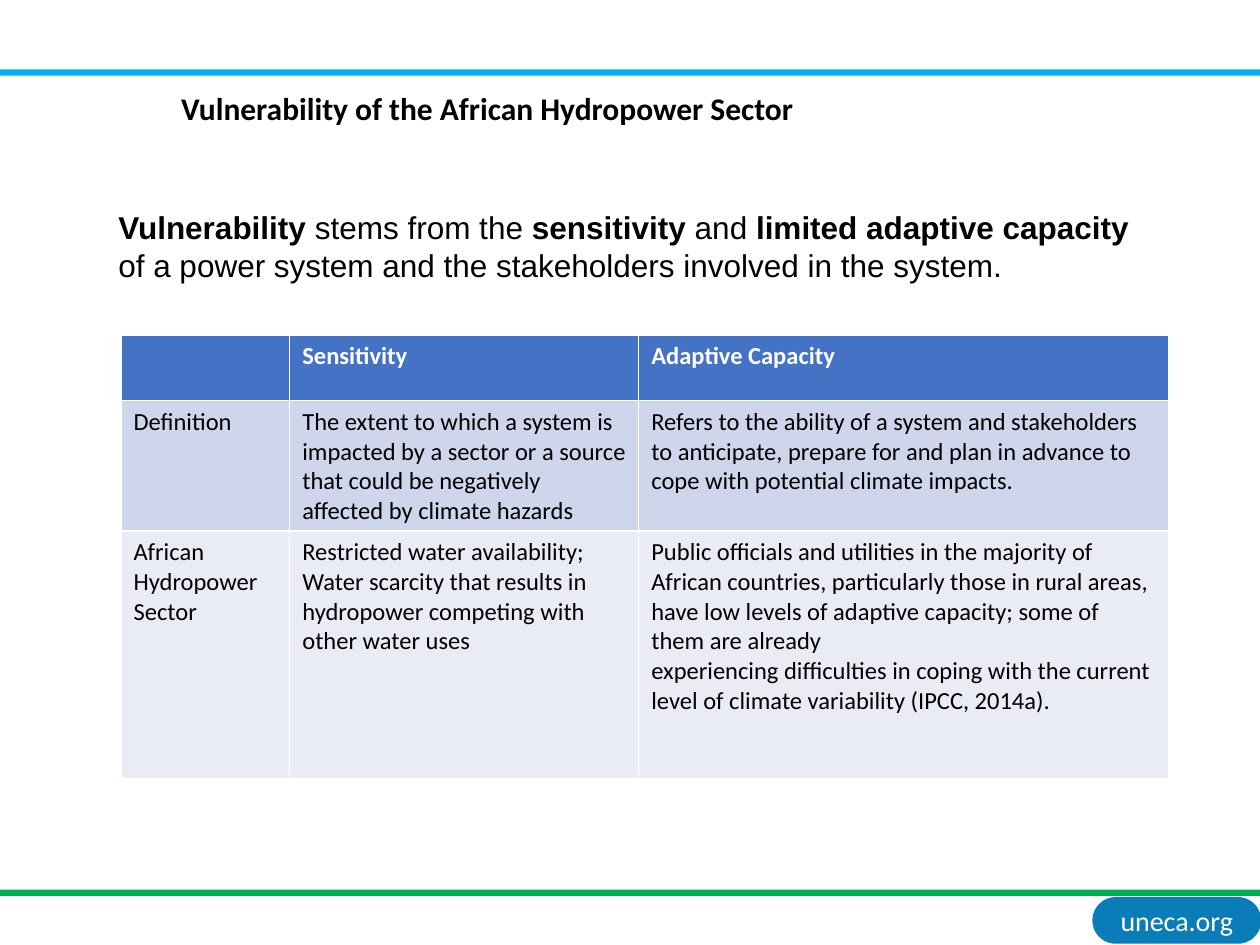
import pptx
import pptx.dml.color
import pptx.enum.shapes
import pptx.enum.text
import pptx.util
from dataclasses import dataclass

Inches = pptx.util.Inches
Shape = pptx.enum.shapes.MSO_SHAPE


@dataclass(frozen=True)
class Theme:
    sky: str = "00B0F0"
    green: str = "00B050"
    badge: str = "0A7CB8"
    header: str = "4472C4"
    bands: tuple = ("CFD5EA", "E9EBF5")
    black: str = "000000"
    white: str = "FFFFFF"
    heading_size: int = 18
    badge_size: int = 16
    table_size: int = 14


theme = Theme()


def paint(target, color):
    target.fill.solid()
    target.fill.fore_color.rgb = pptx.dml.color.RGBColor.from_string(color)


def add_span(para, text, size, color, bold=False, font="Calibri"):
    span = para.add_run()
    span.text = text
    span.font.name = font
    span.font.size = pptx.util.Pt(size)
    span.font.bold = bold
    span.font.color.rgb = pptx.dml.color.RGBColor.from_string(color)


deck = pptx.Presentation()
deck.slide_width, deck.slide_height = Inches(10), Inches(7.5)
page = deck.slides.add_slide(deck.slide_layouts[6])

# Footer badge and the two page rules
blocks = [
    (Shape.ROUNDED_RECTANGLE, 8.67, 7.12, 1.34, 0.37, theme.badge),
    (Shape.RECTANGLE, 0, 0.55, 10, 0.05, theme.sky),
    (Shape.RECTANGLE, 0, 7.06, 10, 0.05, theme.green),
]
for kind, left, top, width, height, color in blocks:
    block = page.shapes.add_shape(
        kind, Inches(left), Inches(top), Inches(width), Inches(height))
    block.shadow.inherit = False
    block.line.fill.background()
    paint(block, color)
    if kind == Shape.ROUNDED_RECTANGLE:
        block.adjustments[0] = 0.5
        frame = block.text_frame
        frame.word_wrap = False
        frame.margin_left = frame.margin_right = Inches(0.05)
        frame.margin_top = frame.margin_bottom = Inches(0.05)
        frame.vertical_anchor = pptx.enum.text.MSO_ANCHOR.MIDDLE
        para = frame.paragraphs[0]
        para.alignment = pptx.enum.text.PP_ALIGN.CENTER
        add_span(para, "uneca.org", theme.badge_size, theme.white)

# Introduction, alternating bold and regular
box = page.shapes.add_textbox(Inches(0.84), Inches(1.6), Inches(8.32), Inches(0.71))
box.text_frame.word_wrap = True
introduction = [
    ("Vulnerability", True),
    (" stems from the ", False),
    ("sensitivity", True),
    (" and ", False),
    ("limited adaptive capacity ", True),
    ("of a power system and the stakeholders involved in the system.", False),
]
for text, bold in introduction:
    add_span(box.text_frame.paragraphs[0], text, theme.heading_size,
             theme.black, bold, "Arial")

# Title
box = page.shapes.add_textbox(Inches(1.34), Inches(0.66), Inches(5.1), Inches(0.4))
box.text_frame.word_wrap = False
add_span(box.text_frame.paragraphs[0], "Vulnerability of the African Hydropower Sector",
         theme.heading_size, theme.black, True)

# Table: each cell is a list of paragraphs
rows = [
    [[], ["Sensitivity"], ["Adaptive Capacity"]],
    [
        ["Definition"],
        ["The extent to which a system is impacted by a sector or a source that "
         "could be negatively affected by climate hazards"],
        ["Refers to the ability of a system and stakeholders to anticipate, prepare "
         "for and plan in advance to cope with potential climate impacts."],
    ],
    [
        ["African Hydropower Sector"],
        ["Restricted water availability; Water scarcity that results in hydropower "
         "competing with other water uses"],
        ["Public officials and utilities in the majority of African countries, "
         "particularly those in rural areas, have low levels of adaptive capacity; "
         "some of them are already",
         "experiencing difficulties in coping with the current level of climate "
         "variability (IPCC, 2014a)."],
    ],
]
table = page.shapes.add_table(
    3, 3, Inches(0.96), Inches(2.66), Inches(8.32), Inches(3.52)).table
for column, width in zip(table.columns, (1.34, 2.77, 4.21)):
    column.width = Inches(width)
for row, height in zip(table.rows, (0.52, 1.03, 1.97)):
    row.height = Inches(height)

fills = (theme.header, *theme.bands)
for row_index, row in enumerate(rows):
    is_header = row_index == 0
    for column_index, texts in enumerate(row):
        cell = table.cell(row_index, column_index)
        paint(cell, fills[row_index])
        for index, text in enumerate(texts):
            frame = cell.text_frame
            para = frame.add_paragraph() if index else frame.paragraphs[0]
            add_span(para, text, theme.table_size,
                     theme.white if is_header else theme.black, is_header)

deck.save("out.pptx")
